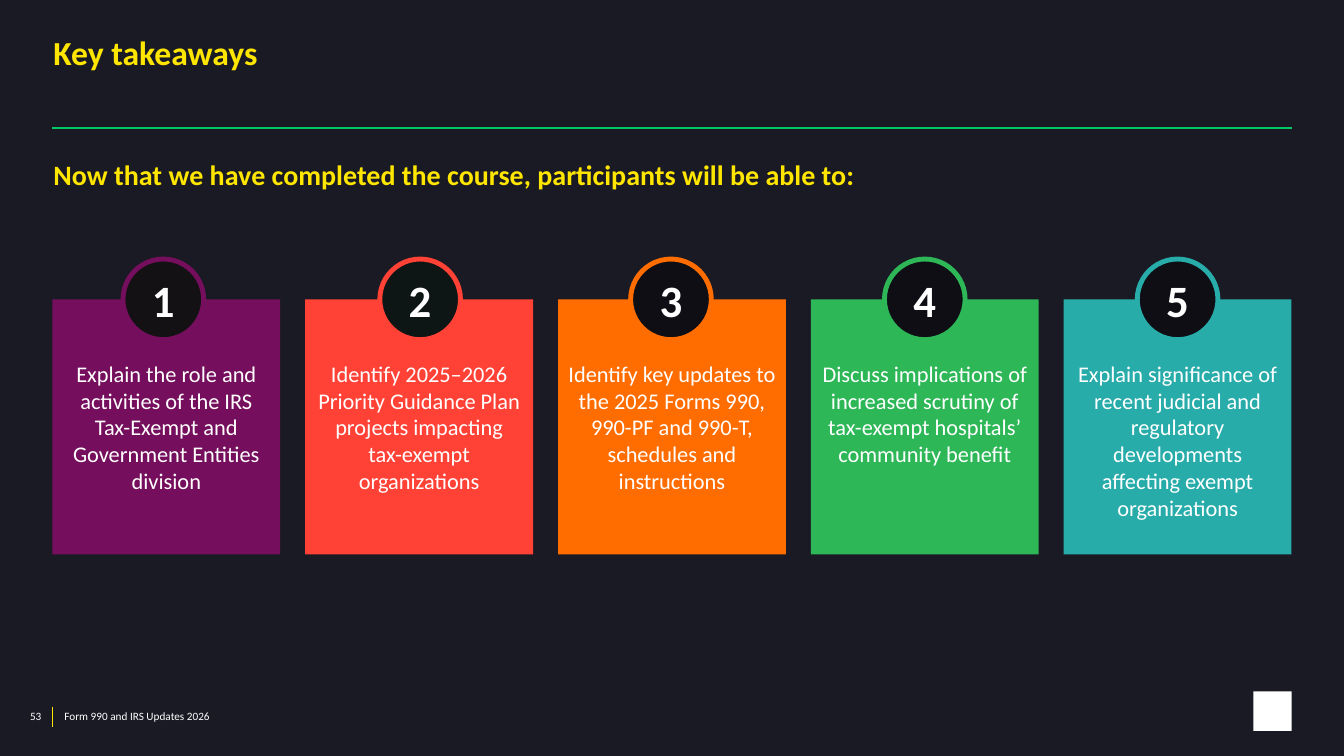
from pptx import Presentation
from pptx.dml.color import RGBColor
from pptx.enum.shapes import MSO_CONNECTOR as Connector, MSO_SHAPE as Shape
from pptx.enum.text import MSO_ANCHOR as Anchor, MSO_AUTO_SIZE as AutoSize, PP_ALIGN as Align
from pptx.oxml.ns import qn
from pptx.util import Inches, Pt
from lxml.etree import SubElement

TITLE = "Key takeaways"
LEAD = "Now that we have completed the course, participants will be able to:"
FOOTER = "Form 990 and IRS Updates 2026"
PAGE_NUMBER = "53"
TAKEAWAYS = [
    ("Explain the role and activities of the IRS Tax-Exempt and Government Entities division",
     "750E5C", "141115", 0.70),
    ("Identify 2025–2026 Priority Guidance Plan projects impacting\ntax-exempt organizations",
     "FF4136", "0E1515", 0.74),
    ("Identify key updates to the 2025 Forms 990, 990-PF and 990-T, schedules and instructions",
     "FF6D00", "0E0E14", 0.72),
    ("Discuss implications of increased scrutiny of\ntax-exempt hospitals’ community benefit",
     "2DB757", "0E0E14", 0.73),
    ("Explain significance of recent judicial and regulatory developments affecting exempt organizations",
     "27ACAA", "0E0E14", 0.73),
]
BACKGROUND, YELLOW, GREEN, WHITE = "1A1A24", "FFE600", "00C864", "FFFFFF"
FONT = "Calibri"

WIDTH, HEIGHT = 13.33, 7.5
LEFT, RIGHT = 0.52, 12.81
TEXT_LEFT, TEXT_WIDTH = 0.53, 12.28
CARD_TOP, CARD_WIDTH, CARD_HEIGHT = 2.97, 2.26, 2.53
CARD_STEP = (RIGHT - LEFT - CARD_WIDTH) / (len(TAKEAWAYS) - 1)
BADGE = 0.8


def color(value):
    return RGBColor.from_string(value)


def write(shape, text, size, ink=WHITE, bold=False, align=Align.LEFT,
          anchor=Anchor.TOP, insets=(0, 0, 0, 0)):
    frame = shape.text_frame
    frame.word_wrap = True
    frame.auto_size = AutoSize.NONE
    frame.vertical_anchor = anchor
    frame.margin_left, frame.margin_top, frame.margin_right, frame.margin_bottom = map(Inches, insets)
    paragraph = frame.paragraphs[0]
    paragraph.alignment = align
    for index, line in enumerate(text.split("\n")):
        if index:
            paragraph.add_line_break()
        run = paragraph.add_run()
        run.text = line
        run.font.name = FONT
        run.font.size = Pt(size)
        run.font.bold = bold
        run.font.color.rgb = color(ink)
    return paragraph


def add_text(slide, box, text, size, **style):
    return write(slide.shapes.add_textbox(*map(Inches, box)), text, size, **style)


def add_filled(slide, kind, box, fill, outline=None):
    shape = slide.shapes.add_shape(kind, *map(Inches, box))
    shape.shadow.inherit = False
    shape.fill.solid()
    shape.fill.fore_color.rgb = color(fill)
    if outline:
        shape.line.color.rgb = color(outline)
        shape.line.width = Pt(3.5)
    else:
        shape.line.fill.background()
    return shape


def add_rule(slide, start, end, ink, width):
    rule = slide.shapes.add_connector(Connector.STRAIGHT, *map(Inches, start + end))
    rule.line.color.rgb = color(ink)
    rule.line.width = Pt(width)
    SubElement(rule._element.spPr, qn("a:effectLst"))


def add_frame(slide):
    add_filled(slide, Shape.RECTANGLE, (12.43, 6.86, 0.38, 0.39), WHITE)
    add_rule(slide, (LEFT, 7.01), (LEFT, 7.21), YELLOW, 1)
    add_text(slide, (0.54, 7.04, 6, 0.13), FOOTER, 8, insets=(0.1, 0, 0, 0))
    add_text(slide, (0.11, 7.04, 0.4, 0.13), PAGE_NUMBER, 8,
             align=Align.RIGHT, insets=(0, 0, 0.1, 0))
    add_rule(slide, (LEFT, 1.27), (RIGHT, 1.27), GREEN, 2)


def add_headings(slide):
    title = slide.shapes.title
    title.left, title.top, title.width, title.height = map(
        Inches, (TEXT_LEFT, 0.38, TEXT_WIDTH, 0.51))
    write(title, TITLE, 24, ink=YELLOW, bold=True).line_spacing = 0.85
    lead = add_text(slide, (TEXT_LEFT, 1.56, TEXT_WIDTH, 0.34), LEAD, 20, ink=YELLOW, bold=True)
    lead.space_after = Pt(12)


def add_takeaway(slide, number, text, accent, badge_fill, badge_offset):
    left = LEFT + (number - 1) * CARD_STEP
    card = add_filled(slide, Shape.RECTANGLE, (left, CARD_TOP, CARD_WIDTH, CARD_HEIGHT), accent)
    paragraph = write(card, text, 16, align=Align.CENTER, insets=(0.1, 0.6, 0.1, 0))
    paragraph.space_after = Pt(6)
    badge = add_filled(slide, Shape.OVAL,
                       (left + badge_offset, CARD_TOP - BADGE / 2, BADGE, BADGE),
                       badge_fill, accent)
    write(badge, str(number), 32, bold=True, align=Align.CENTER, anchor=Anchor.MIDDLE)


def main():
    presentation = Presentation()
    presentation.slide_width, presentation.slide_height = Inches(WIDTH), Inches(HEIGHT)
    slide = presentation.slides.add_slide(presentation.slide_layouts[5])
    slide.background.fill.solid()
    slide.background.fill.fore_color.rgb = color(BACKGROUND)
    add_frame(slide)
    add_headings(slide)
    for number, takeaway in enumerate(TAKEAWAYS, 1):
        add_takeaway(slide, number, *takeaway)
    presentation.save("out.pptx")


if __name__ == "__main__":
    main()
